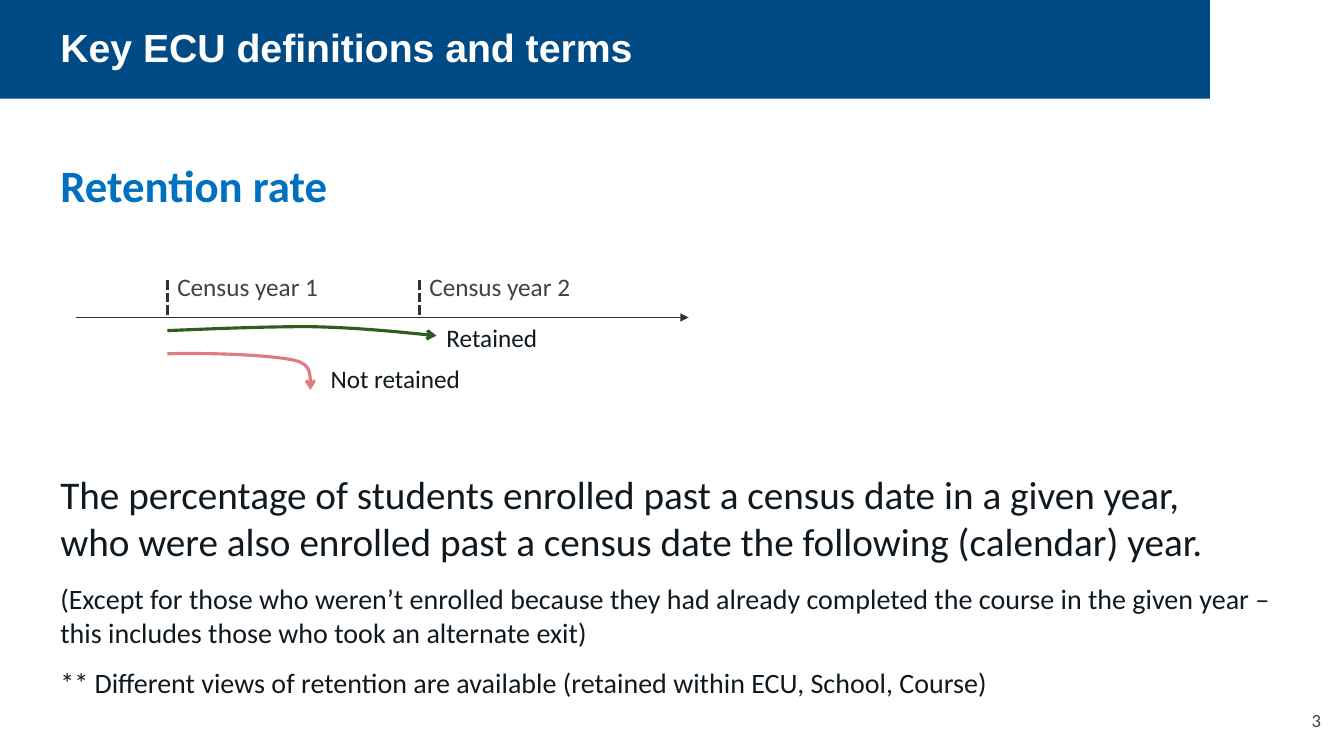
from dataclasses import dataclass

from pptx import Presentation
from pptx.dml.color import RGBColor
from pptx.enum.dml import MSO_LINE
from pptx.enum.shapes import MSO_CONNECTOR, MSO_SHAPE
from pptx.enum.text import MSO_ANCHOR, PP_ALIGN
from pptx.oxml.ns import qn
from pptx.util import Inches, Pt
from lxml import etree


@dataclass(frozen=True)
class Theme:
    banner: str = "004B85"
    white: str = "FFFFFF"
    heading: str = "0070C0"
    ink: str = "101920"
    gray: str = "404140"
    axis: str = "303130"
    retained: str = "2E5D21"
    lost: str = "DF7C81"
    title_size: float = 28
    heading_size: float = 32
    body_size: float = 28
    note_size: float = 20
    label_size: float = 18
    number_size: float = 13.3


theme = Theme()
deck = Presentation()
deck.slide_width, deck.slide_height = Inches(13.33), Inches(7.5)
page = deck.slides.add_slide(deck.slide_layouts[6])


def add_text(text, left, top, width, height, sizes, color, font="Calibri", bold=False,
             align=PP_ALIGN.LEFT, anchor=MSO_ANCHOR.TOP, space_after=0, line_spacing=1.0):
    """Add a text box; text and sizes are lists with one entry per paragraph."""
    box = page.shapes.add_textbox(Inches(left), Inches(top), Inches(width), Inches(height))
    frame = box.text_frame
    frame.word_wrap = True
    frame.vertical_anchor = anchor
    for index, (words, size) in enumerate(zip(text, sizes)):
        para = frame.add_paragraph() if index else frame.paragraphs[0]
        para.text = words
        para.alignment = align
        para.space_after = Pt(space_after)
        para.line_spacing = line_spacing
        for span in para.runs:
            span.font.name, span.font.size, span.font.bold = font, Pt(size), bold
            span.font.color.rgb = RGBColor.from_string(color)


def style_line(shape, color, width, arrow=None, dash=None):
    shape.line.color.rgb = RGBColor.from_string(color)
    shape.line.width = Pt(width)
    if dash:
        shape.line.dash_style = dash
    properties = shape.element.spPr
    if arrow:
        etree.SubElement(properties.find(qn("a:ln")), qn("a:tailEnd"), type=arrow)
    etree.SubElement(properties, qn("a:effectLst"))


# Banner, title and page number
banner = page.shapes.add_shape(MSO_SHAPE.RECTANGLE, 0, 0, Inches(12), Inches(0.98))
banner.shadow.inherit = False
banner.fill.solid()
banner.fill.fore_color.rgb = RGBColor.from_string(theme.banner)
banner.line.fill.background()
add_text(["3"], 12.5, 6.98, 0.7, 0.33, [theme.number_size], theme.gray, align=PP_ALIGN.RIGHT)
add_text(["Key ECU definitions and terms"], 0.5, 0, 11.5, 0.98, [theme.title_size], theme.white,
         font="Arial", bold=True, anchor=MSO_ANCHOR.MIDDLE, line_spacing=0.9)

# Heading and definition
add_text(["Retention rate"], 0.5, 1.52, 4.26, 0.64, [theme.heading_size], theme.heading, bold=True)
definition = [
    "The percentage of students enrolled past a census date in a given year,\n"
    "who were also enrolled past a census date the following (calendar) year.",
    "(Except for those who weren’t enrolled because they had already completed the course "
    "in the given year – this includes those who took an alternate exit)",
    "** Different views of retention are available (retained within ECU, School, Course)",
]
add_text(definition, 0.5, 4.62, 12.36, 2.39,
         [theme.body_size, theme.note_size, theme.note_size], theme.ink, space_after=12)

# Student routes: start point, then two control points and an end point per curve
routes = [
    ("Retained", 4.33, 3.15, 1.43, theme.retained,
     [(1.66, 3.28), (2.14, 3.26), (2.63, 3.24), (3.07, 3.24),
      (3.52, 3.25), (3.93, 3.29), (4.33, 3.33)]),
    ("Not retained", 3.18, 3.55, 2.81, theme.lost,
     [(1.66, 3.51), (2.12, 3.5), (2.57, 3.52), (2.84, 3.56),
      (3.07, 3.59), (3.09, 3.73), (3.08, 3.87)]),
]
for label, left, top, width, color, points in routes:
    start, *rest = [(Inches(x), Inches(y)) for x, y in points]
    builder = page.shapes.build_freeform(*start)
    builder.add_line_segments(rest, close=False)
    route = builder.convert_to_shape()
    segments = list(route.element.iter(qn("a:lnTo")))
    for first in range(0, len(segments), 3):
        curve = etree.Element(qn("a:cubicBezTo"))
        segments[first].addprevious(curve)
        for segment in segments[first:first + 3]:
            curve.append(segment[0])
            segment.getparent().remove(segment)
    route.fill.background()
    style_line(route, color, 2.25, arrow="arrow")
    add_text([label], left, top, width, 0.41, [theme.label_size], theme.ink)

# Time axis and census dates
axis_y = 3.15
axis = page.shapes.add_connector(MSO_CONNECTOR.STRAIGHT, Inches(0.75), Inches(axis_y),
                                 Inches(6.83), Inches(axis_y))
style_line(axis, theme.axis, 0.5, arrow="triangle")
for year in (1, 2):
    x = 1.66 + 2.5 * (year - 1)
    marker = page.shapes.add_connector(MSO_CONNECTOR.STRAIGHT, Inches(x), Inches(2.78),
                                       Inches(x), Inches(axis_y))
    style_line(marker, theme.axis, 2.25, dash=MSO_LINE.SQUARE_DOT)
    add_text([f"Census year {year}"], x, 2.64, 1.99, 0.4, [theme.label_size], theme.gray)

deck.save("out.pptx")
